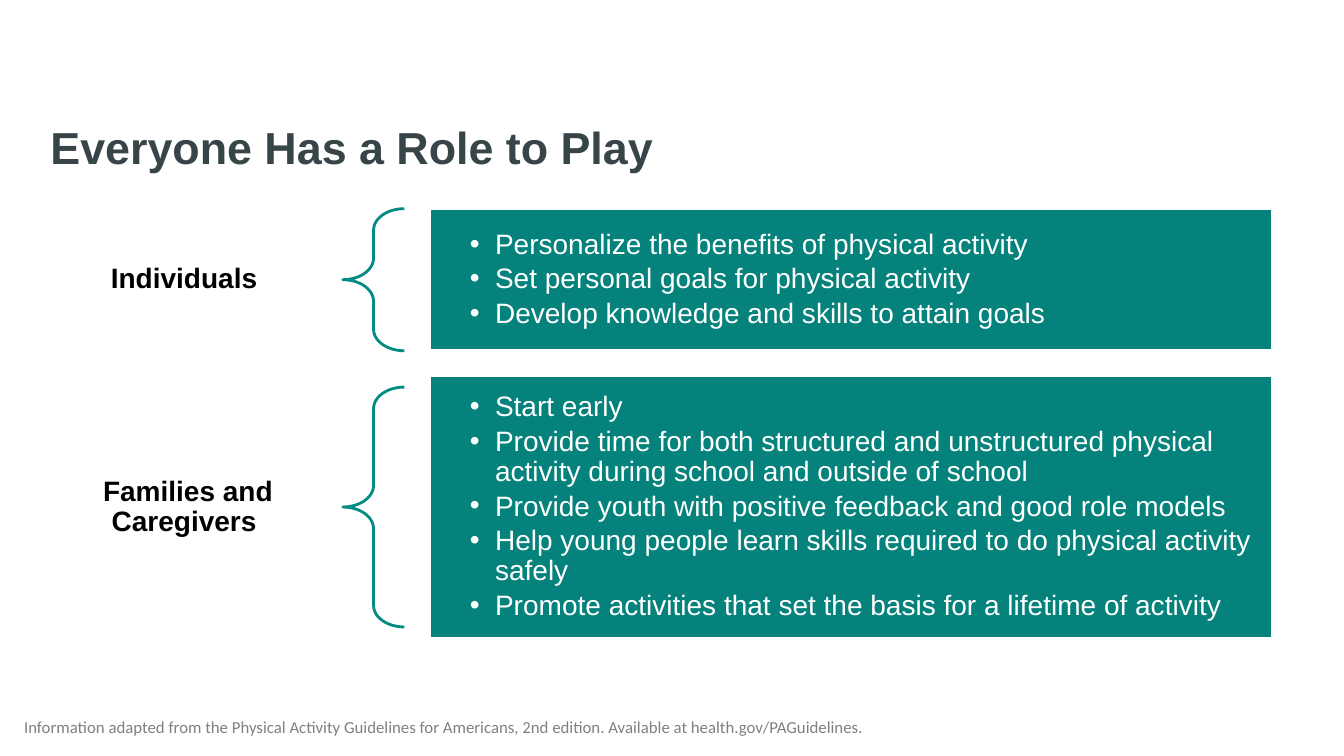
from lxml import etree
from pptx import Presentation
from pptx.dml.color import RGBColor
from pptx.enum.shapes import MSO_SHAPE
from pptx.enum.text import MSO_ANCHOR, MSO_AUTO_SIZE, PP_ALIGN
from pptx.oxml.ns import qn
from pptx.util import Inches, Pt

LEFT, CENTER = PP_ALIGN.LEFT, PP_ALIGN.CENTER
MIDDLE, BOTTOM = MSO_ANCHOR.MIDDLE, MSO_ANCHOR.BOTTOM
NO_AUTOFIT = MSO_AUTO_SIZE.NONE
LEFT_BRACE = MSO_SHAPE.LEFT_BRACE

WHITE = RGBColor(0xFF, 0xFF, 0xFF)
BLACK = RGBColor(0, 0, 0)
GRAY = RGBColor(0x80, 0x80, 0x80)
SLATE = RGBColor(0x37, 0x45, 0x49)
TEAL = RGBColor(0x04, 0x82, 0x7B)
BRACE_TEAL = RGBColor(0x04, 0x8B, 0x83)

ROW_HEIGHT = 1.41
# Role, bullets, panel (top, height), brace (top, height)
ROLES = [
    ("Individuals ", [
        "Personalize the benefits of physical activity",
        "Set personal goals for physical activity",
        "Develop knowledge and skills to attain goals",
    ], (2.07, ROW_HEIGHT), (2.07, ROW_HEIGHT)),
    ("Families and Caregivers ", [
        "Start early",
        "Provide time for both structured and unstructured physical activity "
        "during school and outside of school",
        "Provide youth with positive feedback and good role models",
        "Help young people learn skills required to do physical activity safely",
        "Promote activities that set the basis for a lifetime of activity",
    ], (3.73, 2.6), (3.84, 2.38)),
]


def place(s, left, top, width, height):
    s.left, s.top = Inches(left), Inches(top)
    s.width, s.height = Inches(width), Inches(height)


def add_bullet(p, indent=0.25):
    pPr = p._p.get_or_add_pPr()
    pPr.set("marL", str(Inches(indent)))
    pPr.set("indent", str(-Inches(indent)))
    etree.SubElement(pPr, qn("a:buChar")).set("char", "•")


def write(s, lines, size=20, color=BLACK, bold=False, font="Arial", align=LEFT,
          anchor=MIDDLE, insets=(0.1, 0.05, 0.1, 0.05), spacing=0.9,
          after=0, bullets=False):
    tf = s.text_frame
    tf.word_wrap = True
    tf.auto_size = NO_AUTOFIT
    tf.vertical_anchor = anchor
    tf.margin_left, tf.margin_top, tf.margin_right, tf.margin_bottom = map(Inches, insets)
    for i, line in enumerate(lines):
        p = tf.paragraphs[0] if i == 0 else tf.add_paragraph()
        if bullets:
            add_bullet(p)
        p.alignment = align
        p.line_spacing = spacing
        p.space_before, p.space_after = Pt(0), Pt(after)
        r = p.add_run()
        r.text = line
        r.font.name, r.font.size, r.font.bold = font, Pt(size), bold
        r.font.color.rgb = color


def add_label(slide, role, top):
    s = slide.shapes.add_textbox(Inches(0.33), Inches(top), Inches(3.07), Inches(ROW_HEIGHT))
    write(s, [role], bold=True, align=CENTER, insets=(0.16, 0.06, 0.16, 0.06))


def add_brace(slide, top, height):
    s = slide.shapes.add_shape(LEFT_BRACE, Inches(3.4), Inches(top), Inches(0.61), Inches(height))
    s.adjustments[0], s.adjustments[1] = 0.35, 0.5
    s.shadow.inherit = False
    s.fill.background()
    s.line.color.rgb = BRACE_TEAL
    s.line.width = Pt(2)


def fill_panel(s, bullets, top, height):
    place(s, 4.26, top, 8.36, height)
    s.fill.solid()
    s.fill.fore_color.rgb = TEAL
    s.line.color.rgb = WHITE
    s.line.width = Pt(2)
    write(s, bullets, color=WHITE, insets=(0.4, 0.08, 0.08, 0.08), after=3, bullets=True)


def main():
    prs = Presentation()
    prs.slide_width, prs.slide_height = Inches(13.33), Inches(7.5)
    slide = prs.slides.add_slide(prs.slide_layouts.get_by_name("Two Content"))

    # Title
    title = slide.shapes.title
    place(title, 0.5, 1.2, 12.3, 0.5)
    write(title, ["Everyone Has a Role to Play"], size=32, color=SLATE, bold=True,
          insets=(0, 0, 0, 0), spacing=1.0)

    # One row per role: label, brace, bullet panel
    for idx, (role, bullets, panel, brace) in enumerate(ROLES, start=1):
        panel_top, panel_height = panel
        add_label(slide, role, panel_top + (panel_height - ROW_HEIGHT) / 2)
        add_brace(slide, *brace)
        fill_panel(slide.placeholders[idx], bullets, *panel)

    # Source note
    note = slide.shapes.add_textbox(Inches(0.14), Inches(6.65), Inches(10.95), Inches(0.71))
    write(note, ["Information adapted from the Physical Activity Guidelines for Americans, "
                 "2nd edition. Available at health.gov/PAGuidelines."],
          size=12, color=GRAY, font="Calibri", anchor=BOTTOM, spacing=1.0)

    prs.save("out.pptx")


if __name__ == "__main__":
    main()
